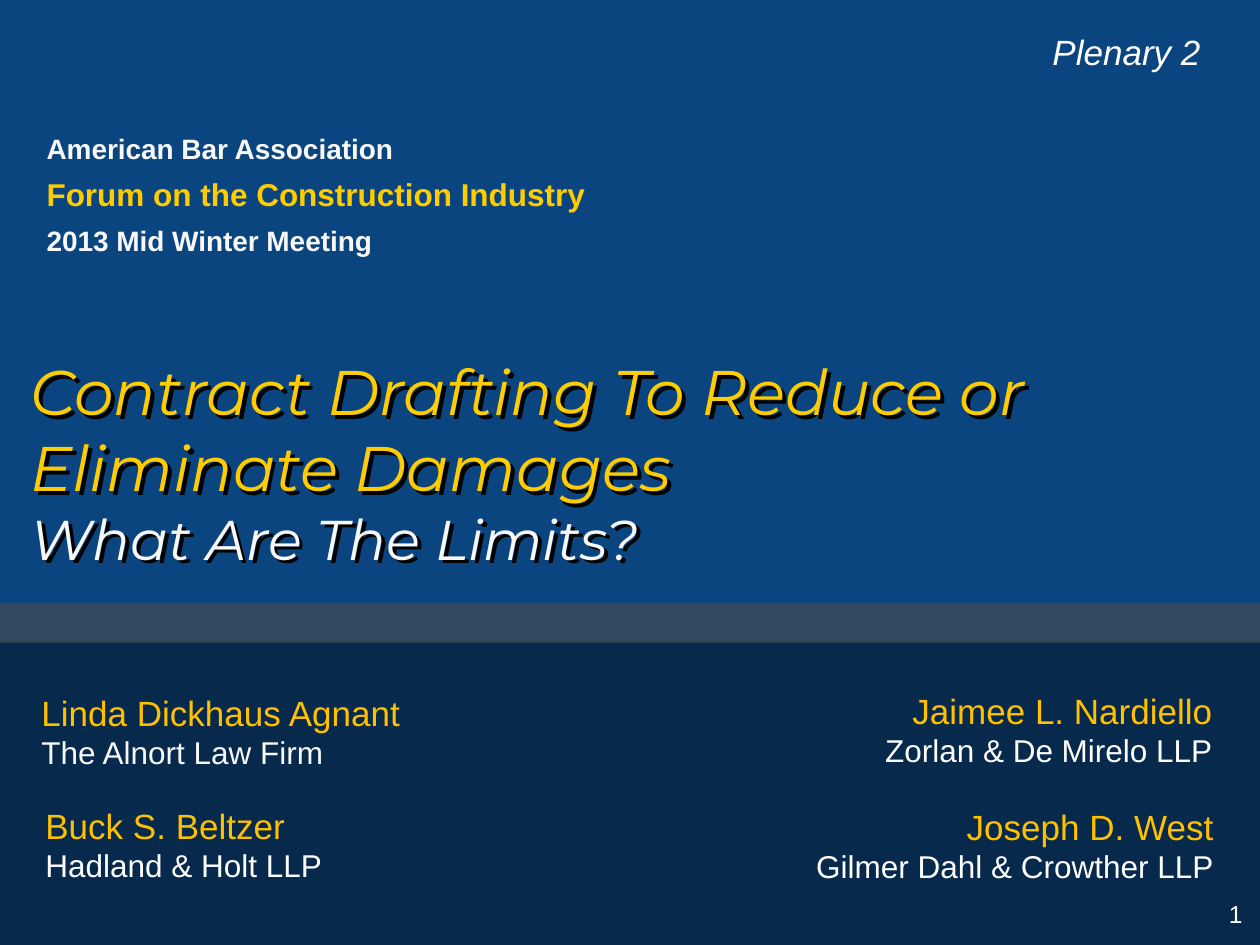
from dataclasses import dataclass

from lxml.etree import SubElement
from pptx import Presentation
from pptx.dml.color import RGBColor
from pptx.enum.shapes import MSO_SHAPE as Shape
from pptx.enum.text import MSO_ANCHOR as Anchor, MSO_AUTO_SIZE as AutoSize, PP_ALIGN as Align
from pptx.oxml.ns import qn
from pptx.util import Emu, Pt

PX_PER_INCH = 126
WIDTH, HEIGHT = 1260, 945
GOLD, AMBER, OFF_WHITE, WHITE = "FFCC00", "FFC000", "F8F8F8", "FFFFFF"


@dataclass(frozen=True)
class Box:
    left: int
    top: int
    width: int
    height: int


@dataclass(frozen=True)
class Panel:
    box: Box
    color: str
    opacity: int


@dataclass(frozen=True)
class Line:
    text: str
    size: int
    color: str
    bold: bool = False
    italic: bool = False
    space_before: int = 0
    font: str = "Arial"


@dataclass(frozen=True)
class Speaker:
    name: str
    firm: str
    firm_color: str
    box: Box
    align: Align


PANELS = [
    Panel(Box(0, 641, WIDTH, HEIGHT - 641), "000000", 40),
    Panel(Box(0, 0, WIDTH, HEIGHT), "000000", 50),
    Panel(Box(0, 603, WIDTH, 40), "4D4D4D", 60),
]
MEETING = [
    Line("American Bar Association", 16, OFF_WHITE, bold=True),
    Line("Forum on the Construction Industry", 18, GOLD, bold=True, space_before=6),
    Line("2013 Mid Winter Meeting", 16, OFF_WHITE, bold=True, space_before=6),
]
TITLE = [
    Line("Contract Drafting To Reduce or Eliminate Damages", 36, GOLD,
         italic=True, font="Montserrat"),
    Line("What Are The Limits?", 32, OFF_WHITE, italic=True, font="Montserrat"),
]
SPEAKERS = [
    Speaker("Linda Dickhaus Agnant", "The Alnort Law Firm", OFF_WHITE,
            Box(29, 685, 699, 93), Align.LEFT),
    Speaker("Buck S. Beltzer", "Hadland & Holt LLP", WHITE,
            Box(33, 798, 630, 93), Align.LEFT),
    Speaker("Jaimee L. Nardiello", "Zorlan & De Mirelo LLP", WHITE,
            Box(595, 683, 630, 93), Align.RIGHT),
    Speaker("Joseph D. West", "Gilmer Dahl & Crowther LLP", WHITE,
            Box(596, 799, 630, 93), Align.RIGHT),
]


def px(length: int) -> Emu:
    return Emu(round(length * 914400 / PX_PER_INCH))


def rgb(color: str) -> RGBColor:
    return RGBColor.from_string(color)


def corners(box: Box) -> list[Emu]:
    return [px(side) for side in (box.left, box.top, box.width, box.height)]


def set_all(target, values: dict) -> None:
    for name, value in values.items():
        setattr(target, name, value)


def draw_panel(slide, panel: Panel) -> None:
    band = slide.shapes.add_shape(Shape.RECTANGLE, *corners(panel.box))
    band.shadow.inherit = False
    band.line.fill.background()
    band.fill.solid()
    band.fill.fore_color.rgb = rgb(panel.color)
    tint = next(band.fill._xPr.iter(qn("a:srgbClr")))
    SubElement(tint, qn("a:alpha"), val=str(panel.opacity * 1000))


def write_lines(frame, lines: list[Line], align: Align, anchor: Anchor = Anchor.TOP) -> None:
    set_all(frame, {"word_wrap": True, "auto_size": AutoSize.NONE, "vertical_anchor": anchor})
    for index, line in enumerate(lines):
        paragraph = frame.add_paragraph() if index else frame.paragraphs[0]
        set_all(paragraph, {"alignment": align, "space_before": Pt(line.space_before)})
        run = paragraph.add_run()
        run.text = line.text
        set_all(run.font, {"name": line.font, "size": Pt(line.size),
                           "bold": line.bold, "italic": line.italic})
        run.font.color.rgb = rgb(line.color)


def add_text(slide, box: Box, lines: list[Line], align: Align) -> None:
    write_lines(slide.shapes.add_textbox(*corners(box)).text_frame, lines, align)


def fill_placeholder(slide, holder, box: Box, lines: list[Line], anchor: Anchor) -> None:
    """Place and fill a placeholder, bringing it in front of the panels."""
    slide.shapes._spTree.append(holder._element)
    set_all(holder, dict(zip(("left", "top", "width", "height"), corners(box))))
    write_lines(holder.text_frame, lines, Align.LEFT, anchor)


def add_text_shadow(shape) -> None:
    """Give an unfilled shape a hard black shadow, which falls from its text."""
    effects = SubElement(shape._element.spPr, qn("a:effectLst"))
    shadow = SubElement(effects, qn("a:outerShdw"), blurRad="0", dist="40000",
                        dir="2700000", algn="tl", rotWithShape="0")
    SubElement(shadow, qn("a:srgbClr"), val="000000")


def main() -> None:
    deck = Presentation()
    set_all(deck, {"slide_width": px(WIDTH), "slide_height": px(HEIGHT)})
    slide = deck.slides.add_slide(deck.slide_layouts[0])
    slide.background.fill.solid()
    slide.background.fill.fore_color.rgb = rgb("178BFF")

    for panel in PANELS:
        draw_panel(slide, panel)

    title, meeting = slide.shapes.title, slide.placeholders[1]
    fill_placeholder(slide, meeting, Box(34, 125, 1079, 150), MEETING, Anchor.TOP)
    fill_placeholder(slide, title, Box(18, 345, 1220, 234), TITLE, Anchor.MIDDLE)
    add_text_shadow(title)

    for speaker in SPEAKERS:
        lines = [Line(speaker.name, 20, AMBER), Line(speaker.firm, 18, speaker.firm_color)]
        add_text(slide, speaker.box, lines, speaker.align)

    add_text(slide, Box(829, 24, 384, 55), [Line("Plenary 2", 20, WHITE, italic=True)], Align.RIGHT)
    add_text(slide, Box(961, 893, 294, 52), [Line("1", 14, WHITE)], Align.RIGHT)
    deck.save("out.pptx")


if __name__ == "__main__":
    main()
